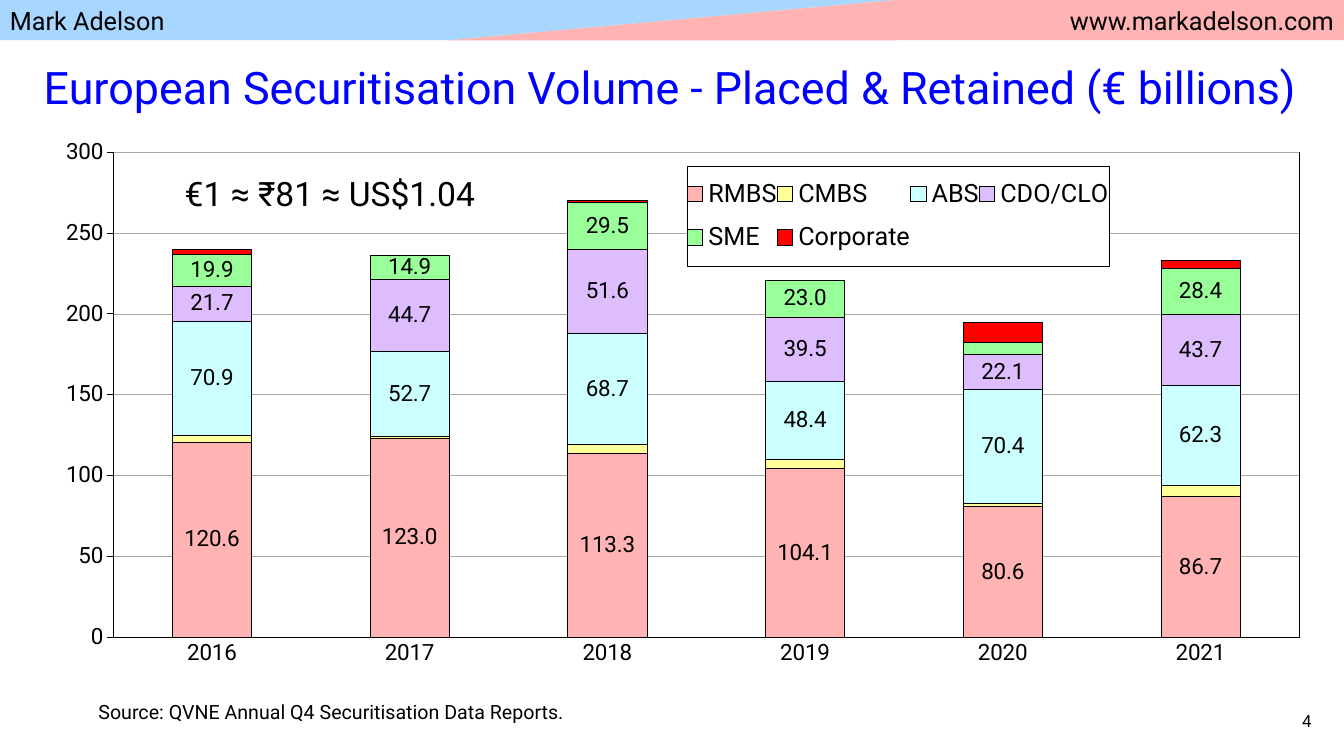
import pptx
import pptx.chart.data
import pptx.dml.color
import pptx.enum.chart
import pptx.enum.shapes
import pptx.enum.text
import pptx.oxml
import pptx.oxml.ns
import pptx.util

WIDTH, HEIGHT = pptx.util.Inches(13.33), pptx.util.Inches(7.5)
COLUMN, ROW = WIDTH / 120, HEIGHT / 75
FONT = "Roboto"
BLACK, WHITE, BLUE, SKY, PINK, GREY = "000000", "FFFFFF", "0000FF", "A7D6FF", "FFB3B3", "A6A6A6"
LEFT, RIGHT = pptx.enum.text.PP_ALIGN.LEFT, pptx.enum.text.PP_ALIGN.RIGHT
RECTANGLE = pptx.enum.shapes.MSO_SHAPE.RECTANGLE
TRIANGLE = pptx.enum.shapes.MSO_SHAPE.ISOSCELES_TRIANGLE

YEARS = ["2016", "2017", "2018", "2019", "2020", "2021"]
VOLUMES = [
    ("RMBS", PINK, True, (120.6, 123, 113.3, 104.1, 80.6, 86.7)),
    ("CMBS", "FFFF99", False, (4, 1, 6, 6, 2, 7)),
    ("ABS", "CCFFFF", True, (70.9, 52.7, 68.7, 48.4, 70.4, 62.3)),
    ("CDO/CLO", "DEBDFF", True, (21.7, 44.7, 51.6, 39.5, 22.1, 43.7)),
    ("SME", "99FF99", True, (19.9, 14.9, 29.5, 23, 7.5, 28.4)),
    ("Corporate", "FF0000", False, (3, 0, 1, 0, 12, 5)),
]
SMALLEST_LABEL = 10


def paint(target, color):
    """Give a fill a solid hex colour."""
    target.solid()
    target.fore_color.rgb = pptx.dml.color.RGBColor.from_string(color)


def style_font(font, size, color=BLACK):
    """Set the deck's typeface with a size and colour."""
    font.name, font.size = FONT, pptx.util.Pt(size)
    paint(font.fill, color)


def style_line(line, color=BLACK, width=0.5):
    """Set a line's colour and width in points."""
    paint(line.fill, color)
    line.width = pptx.util.Pt(width)


def grid(column, row, columns, rows):
    """Turn grid columns and rows into left, top, width and height."""
    return tuple(round(n) for n in (column * COLUMN, row * ROW, columns * COLUMN, rows * ROW))


def write(shape, text, size, color=BLACK, align=LEFT, middle=True):
    """Put one formatted paragraph into a shape."""
    frame = shape.text_frame
    frame.text = text
    frame.word_wrap = True
    frame.auto_size = pptx.enum.text.MSO_AUTO_SIZE.NONE
    anchors = pptx.enum.text.MSO_ANCHOR
    frame.vertical_anchor = anchors.MIDDLE if middle else anchors.TOP
    frame.paragraphs[0].alignment = align
    style_font(frame.paragraphs[0].runs[0].font, size, color)


def add_note(slide, place, text, size, **layout):
    """Add a text box."""
    write(slide.shapes.add_textbox(*grid(*place)), text, size, **layout)


def add_band(slide, kind, column, color, flip=None):
    """Add one third of the header band."""
    band = slide.shapes.add_shape(kind, *grid(column, 0, 40, 4))
    band.shadow.inherit = False
    paint(band.fill, color)
    band.line.fill.background()
    if flip:
        band.adjustments[0] = 0
        band._element.spPr.xfrm.set(flip, "1")
    return band


def add_header(slide):
    """Add the two-coloured header with author and address."""
    write(add_band(slide, RECTANGLE, 0, SKY), "Mark Adelson", 18)
    write(add_band(slide, RECTANGLE, 80, PINK), "www.markadelson.com", 18, align=RIGHT)
    add_band(slide, TRIANGLE, 40, SKY, "flipV")
    add_band(slide, TRIANGLE, 40, PINK, "flipH")


def chart_xml(body):
    """Parse a chart fragment with its namespaces."""
    head, tail = body.split(">", 1)
    return pptx.oxml.parse_xml(f'{head} {pptx.oxml.ns.nsdecls("c", "a")}>{tail}')


def manual_layout(x, y, w, h, inner=False):
    """Build a fixed layout from percentages of the chart's size."""
    target = '<c:layoutTarget val="inner"/>' if inner else ""
    modes = '<c:xMode val="edge"/><c:yMode val="edge"/>'
    sizes = "".join(f'<c:{k} val="{v / 100}"/>' for k, v in zip("xywh", (x, y, w, h)))
    return chart_xml(f"<c:layout><c:manualLayout>{target}{modes}{sizes}</c:manualLayout></c:layout>")


def frame_xml(fill):
    """Build a thin black outline around the given fill."""
    return chart_xml(f'<c:spPr>{fill}<a:ln w="6350"><a:solidFill><a:srgbClr val="{BLACK}"/>'
                     "</a:solidFill></a:ln></c:spPr>")


def drop_layout(element):
    """Remove the automatic layout of a chart part."""
    for layout in element.findall(pptx.oxml.ns.qn("c:layout")):
        element.remove(layout)


def style_axes(chart):
    """Format the year and volume axes."""
    marks = pptx.enum.chart.XL_TICK_MARK
    for axis, mark in ((chart.category_axis, marks.NONE), (chart.value_axis, marks.OUTSIDE)):
        axis.major_tick_mark, axis.minor_tick_mark = mark, marks.NONE
        style_font(axis.tick_labels.font, 16)
        style_line(axis.format.line)
    volume = chart.value_axis
    volume.minimum_scale, volume.maximum_scale, volume.major_unit = 0, 300, 50
    volume.tick_labels.number_format = "#,##0"
    volume.tick_labels.number_format_is_linked = False
    style_line(volume.major_gridlines.format.line, GREY, 0.25)


def label_series(series, values):
    """Show the values that fit inside their bars."""
    labels = series.data_labels
    labels.show_value = True
    labels.number_format, labels.number_format_is_linked = "0.0", False
    labels.position = pptx.enum.chart.XL_LABEL_POSITION.CENTER
    style_font(labels.font, 16)
    hidden = [i for i, value in enumerate(values) if value < SMALLEST_LABEL]
    for place, index in enumerate(hidden):
        labels._element.insert(place, chart_xml(
            f'<c:dLbl><c:idx val="{index}"/><c:delete val="1"/></c:dLbl>'))


def style_legend(chart):
    """Frame the legend over the upper right of the plot."""
    chart.has_legend = True
    legend = chart.legend
    legend.position = pptx.enum.chart.XL_LEGEND_POSITION.BOTTOM
    legend.include_in_layout = False
    style_font(legend.font, 18)
    element = legend._element
    drop_layout(element)
    overlay = element.find(pptx.oxml.ns.qn("c:overlay"))
    overlay.addprevious(manual_layout(51.3, 6, 32.8, 18.1))
    overlay.addnext(frame_xml(f'<a:solidFill><a:srgbClr val="{WHITE}"/></a:solidFill>'))


def add_volume_chart(slide):
    """Add the stacked columns of yearly volume by asset class."""
    data = pptx.chart.data.CategoryChartData()
    data.categories = YEARS
    for name, _, _, values in VOLUMES:
        data.add_series(name, values)
    kind = pptx.enum.chart.XL_CHART_TYPE.COLUMN_STACKED
    chart = slide.shapes.add_chart(kind, *grid(2.34, 13.2, 115, 54.7), data).chart
    chart.has_title = False
    style_font(chart.font, 16)
    plot = chart.plots[0]
    plot.gap_width, plot.overlap, plot.vary_by_categories = 150, 100, False
    for series, (_, color, labelled, values) in zip(plot.series, VOLUMES):
        paint(series.format.fill, color)
        style_line(series.format.line)
        if labelled:
            label_series(series, values)
    style_axes(chart)
    area = chart._chartSpace.chart.plotArea
    drop_layout(area)
    area.insert(0, manual_layout(6.75, 3.5, 92.1, 87.9, inner=True))
    area.append(frame_xml("<a:noFill/>"))
    style_legend(chart)


def main():
    """Build and save the slide."""
    deck = pptx.Presentation()
    deck.slide_width, deck.slide_height = WIDTH, HEIGHT
    slide = deck.slides.add_slide(deck.slide_layouts[5])
    add_header(slide)
    title = slide.shapes.title
    title.left, title.top, title.width, title.height = grid(3, 5.8, 115, 5.5)
    write(title, "European Securitisation Volume - Placed & Retained (€ billions)", 32, BLUE)
    add_volume_chart(slide)
    add_note(slide, (90, 69.5, 28, 4), "4", 12, align=RIGHT)
    add_note(slide, (7.9, 68.9, 72.5, 3.4), "Source: QVNE Annual Q4 Securitisation Data Reports.", 14, middle=False)
    add_note(slide, (15.6, 16.7, 29.2, 5), "€1 ≈ ₹81 ≈ US$1.04", 24, middle=False)
    deck.save("out.pptx")


if __name__ == "__main__":
    main()
